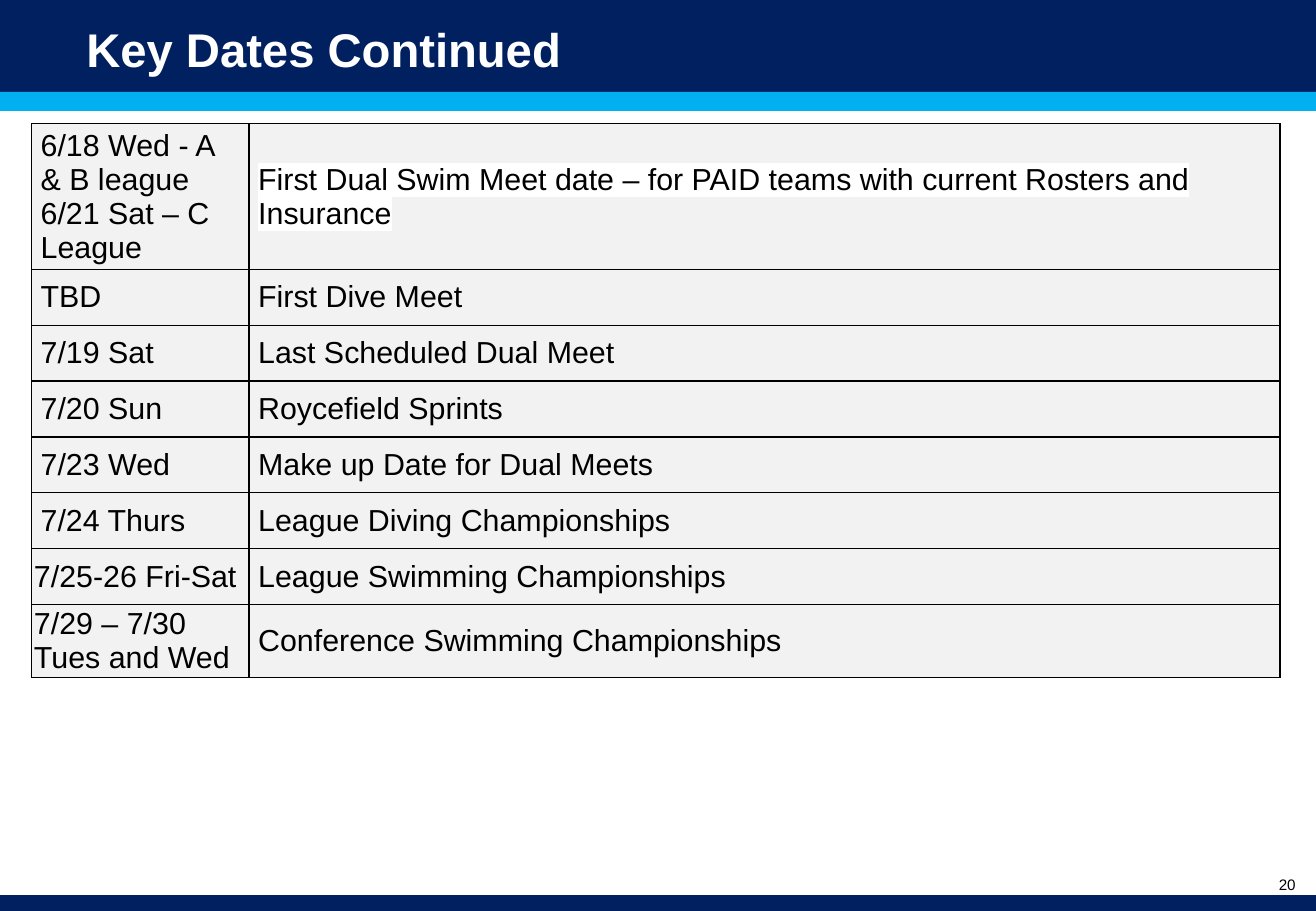
from dataclasses import dataclass
from lxml.etree import SubElement as Sub
from pptx import Presentation
from pptx.dml.color import RGBColor as Rgb
from pptx.enum.shapes import MSO_SHAPE as Kind
from pptx.enum.text import MSO_ANCHOR as Anchor, MSO_AUTO_SIZE as Auto, PP_ALIGN as Align
from pptx.oxml.ns import qn
from pptx.util import Inches, Pt


@dataclass(frozen=True)
class Theme:
    font: str = "Arial"
    navy: str = "002060"
    sky: str = "00B0F0"
    pale: str = "F2F2F2"
    white: str = "FFFFFF"
    black: str = "000000"
    head: int = 28
    body: int = 18
    small: int = 9
    rule: int = 1


class Deck:
    """Holds the theme and the slide; lengths are percents of its size."""

    def __init__(self, theme):
        self.theme = theme
        self.file = Presentation()
        self.file.slide_width = Inches(10.83)
        self.file.slide_height = Inches(7.5)
        self.slide = self.file.slides.add_slide(self.file.slide_layouts[5])
        self.shapes = self.slide.shapes

    def wide(self, share):
        return round(self.file.slide_width * share / 100)

    def high(self, share):
        return round(self.file.slide_height * share / 100)

    def box(self, x, y, w, h):
        return self.wide(x), self.high(y), self.wide(w), self.high(h)

    def style(self, frame, size, color, bold=False, align=Align.LEFT):
        frame.word_wrap = True
        for para in frame.paragraphs:
            para.alignment = align
            for run in para.runs:
                font = run.font
                font.name, font.size, font.bold = self.theme.font, Pt(size), bold
                font.color.rgb = Rgb.from_string(color)

    def bar(self, y, h, color):
        bar = self.shapes.add_shape(Kind.RECTANGLE, *self.box(0, y, 100, h))
        bar.shadow.inherit = False
        bar.fill.solid()
        bar.fill.fore_color.rgb = Rgb.from_string(color)
        bar.line.fill.background()

    def title(self, text, *place):
        head = self.shapes.title
        head.left, head.top, head.width, head.height = self.box(*place)
        frame = head.text_frame
        frame.text = text
        frame.auto_size = Auto.NONE
        frame.vertical_anchor = Anchor.MIDDLE
        self.style(frame, self.theme.head, self.theme.white, bold=True)
        self.shapes.element.append(head.element)  # in front of the bars

    def number(self, text, *place):
        frame = self.shapes.add_textbox(*self.box(*place)).text_frame
        frame.text = text
        self.style(frame, self.theme.small, self.theme.black, align=Align.RIGHT)

    def table(self, rows, x, y, cols, row, full):
        place = self.box(x, y, sum(cols), full)
        frame = self.shapes.add_table(len(rows), len(cols), *place)
        grid = frame.table
        grid.first_row = grid.horz_banding = False
        for col, share in zip(grid.columns, cols):
            col.width = self.wide(share)
        for line, texts in zip(grid.rows, rows):
            line.height = self.high(row)
            for cell, text in zip(line.cells, texts):
                self.cell(cell, text)
        frame.height = self.high(full)  # room for the rows that wrap
        return grid

    def cell(self, cell, text):
        cell.text_frame.text = text
        cell.vertical_anchor = Anchor.MIDDLE
        cell.margin_left = cell.margin_right = Pt(5.4)
        cell.margin_top = cell.margin_bottom = 0
        cell.fill.solid()
        cell.fill.fore_color.rgb = Rgb.from_string(self.theme.pale)
        self.style(cell.text_frame, self.theme.body, self.theme.black)
        for para in cell.text_frame.paragraphs:
            para.line_spacing = 1.0
            para.space_before = para.space_after = Pt(0)
        props = cell._tc.get_or_add_tcPr()
        for spot, side in enumerate("LRTB"):
            edge = Sub(props, qn(f"a:ln{side}"), w=str(Pt(self.theme.rule)))
            self.paint(Sub(edge, qn("a:solidFill")), self.theme.black)
            props.insert(spot, edge)

    def paint(self, node, color):
        Sub(node, qn("a:srgbClr"), val=color)

    def mark(self, cell, color):
        for run in cell.text_frame.paragraphs[0].runs:
            props = run._r.get_or_add_rPr()
            glow = Sub(props, qn("a:highlight"))
            self.paint(glow, color)
            props.find(qn("a:latin")).addprevious(glow)

    def tight(self, cell):
        cell.margin_left, cell.margin_right = Inches(0.02), Inches(0.03)


DATES = [
    ("6/18 Wed - A & B league\n6/21 Sat – C League",
     "First Dual Swim Meet date – for PAID teams with current Rosters and Insurance"),
    ("TBD", "First Dive Meet"),
    ("7/19 Sat", "Last Scheduled Dual Meet"),
    ("7/20 Sun", "Roycefield Sprints"),
    ("7/23 Wed", "Make up Date for Dual Meets"),
    ("7/24 Thurs", "League Diving Championships"),
    ("7/25-26 Fri-Sat", "League Swimming Championships"),
    ("7/29 – 7/30 Tues and Wed", "Conference Swimming Championships"),
]


def main():
    theme = Theme()
    deck = Deck(theme)

    # Header and footer bands
    deck.bar(0, 10.5, theme.navy)
    deck.bar(98.27, 1.73, theme.navy)
    deck.bar(10.08, 2.1, theme.sky)

    # Title and page number
    deck.title("Key Dates Continued", 5.63, 1.73, 64.27, 7.2)
    deck.number("20", 93.08, 95.47, 6.28, 4.5)

    # Table of dates
    grid = deck.table(DATES, 2.4, 13.58, (16.53, 78.35), 6.13, 60.8)
    deck.mark(grid.cell(0, 1), theme.white)
    for row in (6, 7):
        deck.tight(grid.cell(row, 0))

    deck.file.save("out.pptx")


if __name__ == "__main__":
    main()
